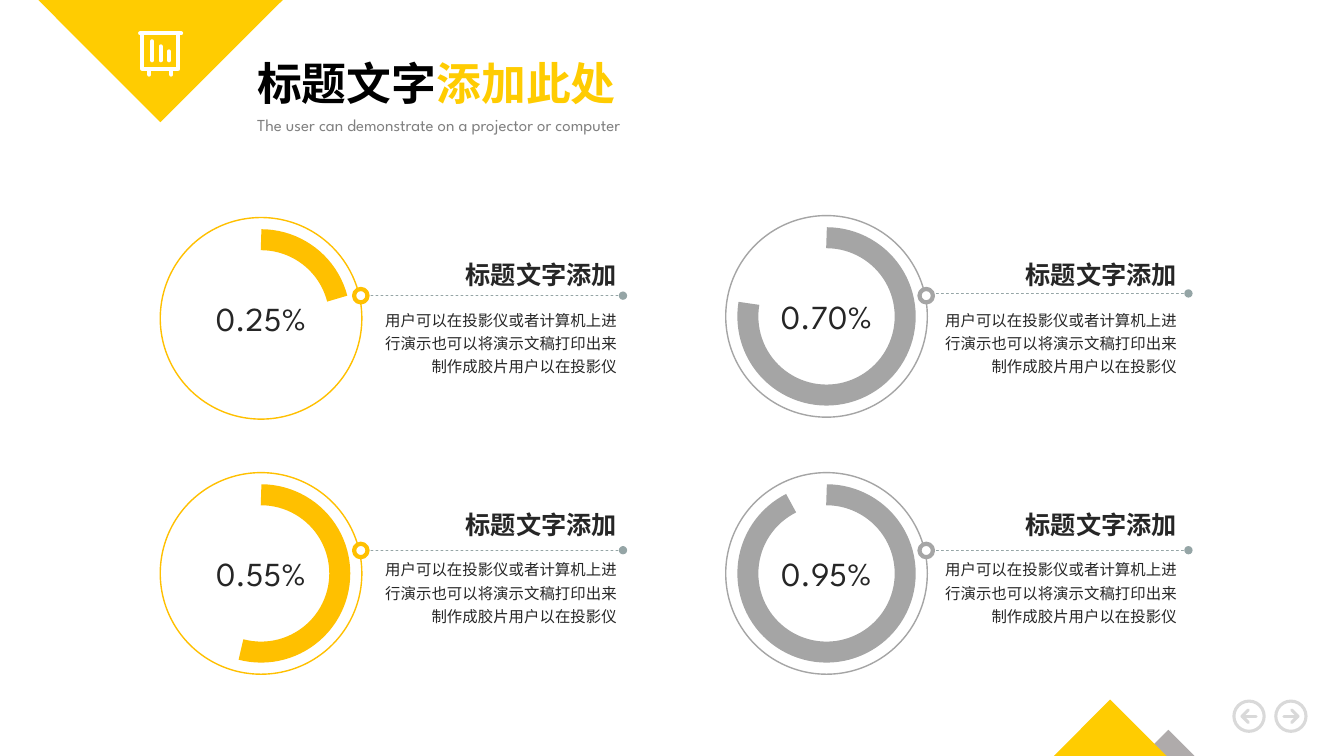
from lxml import etree
from pptx import Presentation
from pptx.dml.color import RGBColor
from pptx.enum.dml import MSO_LINE
from pptx.enum.shapes import MSO_CONNECTOR, MSO_SHAPE
from pptx.enum.text import MSO_ANCHOR, MSO_AUTO_SIZE, PP_ALIGN
from pptx.oxml.ns import qn
from pptx.util import Pt

STRAIGHT = MSO_CONNECTOR.STRAIGHT
OVAL, ARC = MSO_SHAPE.OVAL, MSO_SHAPE.ARC
RECTANGLE = MSO_SHAPE.RECTANGLE
LEFT, CENTER, RIGHT = PP_ALIGN.LEFT, PP_ALIGN.CENTER, PP_ALIGN.RIGHT
TOP, MIDDLE = MSO_ANCHOR.TOP, MSO_ANCHOR.MIDDLE
NO_AUTOFIT = MSO_AUTO_SIZE.NONE
DASH = MSO_LINE.DASH

COLORS = {
    "yellow": "FFCC01", "amber": "FFC000", "gray": "A5A5A5",
    "hill": "AFABAB", "leader": "95A5A6", "nav": "D9D9D9",
    "ink": "262626", "subtitle": "808080", "black": "000000", "white": "FFFFFF",
}
LATIN, CJK = "League Spartan", "Noto Sans CJK SC"
FONTS = {
    "title": {"name": CJK, "size": Pt(32), "bold": True},
    "subtitle": {"name": LATIN, "size": Pt(12), "bold": False},
    "percent": {"name": LATIN, "size": Pt(24)},
    "heading": {"name": "Arial", "size": Pt(18), "bold": True},
    "body": {"name": "Arial", "size": Pt(11)},
}
CARD_HEADING = "标题文字添加"
CARD_BODY = "用户可以在投影仪或者计算机上进行演示也可以将演示文稿打印出来制作成胶片用户以在投影仪"

# Percent, arc end in degrees, color, gauge left and top, leader y, text right and top
CARDS = [
    ("0.25%", 345.48, "amber", 114.5, 155.4, 211.2, 447.8, 177.1),
    ("0.70%", 189.54, "gray", 518.4, 154, 209.6, 847.8, 177.1),
    ("0.55%", 104.83, "amber", 114.5, 337.6, 393, 447.8, 355.7),
    ("0.95%", 243.25, "gray", 518.4, 337.6, 393, 847.8, 355.7),
]


def rgb(color):
    return RGBColor.from_string(COLORS[color])


def apply(target, values):
    for name, value in values.items():
        setattr(target, name, value)


def write(paragraph, text, style, color, **layout):
    apply(paragraph, layout)
    run = paragraph.add_run()
    run.text = text
    apply(run.font, FONTS[style])
    run.font.color.rgb = rgb(color)
    etree.SubElement(run.font._element, qn("a:ea"), typeface=CJK)


def place(shape, left, top, width, height):
    apply(shape, {"left": Pt(left), "top": Pt(top),
                  "width": Pt(width), "height": Pt(height)})


def outline(shapes, kind, left, top, width, height, color, weight, fill=None):
    shape = shapes.add_shape(kind, Pt(left), Pt(top), Pt(width), Pt(height))
    shape.shadow.inherit = False
    if fill:
        shape.fill.solid()
        shape.fill.fore_color.rgb = rgb(fill)
    else:
        shape.fill.background()
    shape.line.color.rgb = rgb(color)
    shape.line.width = Pt(weight)
    return shape


def stroke(shapes, x1, y1, x2, y2, color, weight):
    line = shapes.add_connector(STRAIGHT, Pt(x1), Pt(y1), Pt(x2), Pt(y2))
    line.line.color.rgb = rgb(color)
    line.line.width = Pt(weight)
    line.line._ln.set("cap", "rnd")
    etree.SubElement(line._element.spPr, qn("a:effectLst"))
    return line


def triangle(shapes, points, color):
    builder = shapes.build_freeform(Pt(points[0][0]), Pt(points[0][1]))
    builder.add_line_segments([(Pt(x), Pt(y)) for x, y in points[1:]], close=True)
    shape = builder.convert_to_shape()
    shape.shadow.inherit = False
    shape.fill.solid()
    shape.fill.fore_color.rgb = rgb(color)
    shape.line.fill.background()


def card_text(shapes, right, top, width, height, text, style, spacing):
    box = shapes.add_textbox(Pt(right - width), Pt(top), Pt(width), Pt(height))
    box.text_frame.word_wrap = True
    write(box.text_frame.paragraphs[0], text, style, "ink",
          alignment=RIGHT, line_spacing=spacing)


def header(slide, left, top):
    title, subtitle = slide.placeholders
    place(title, left, top, 272.9, 46)
    place(subtitle, left, top + 40.3, 521.3, 23.8)
    for holder, wrap in ((title, False), (subtitle, True)):
        apply(holder.text_frame, {"auto_size": NO_AUTOFIT, "word_wrap": wrap,
                                  "vertical_anchor": TOP})
    heading = title.text_frame.paragraphs[0]
    write(heading, "标题文字", "title", "black", alignment=LEFT)
    write(heading, "添加此处", "title", "yellow")
    write(subtitle.text_frame.paragraphs[0],
          "The user can demonstrate on a projector or computer",
          "subtitle", "subtitle", alignment=LEFT, line_spacing=1.14,
          space_before=Pt(0))


def gauge_card(slide, percent, end, color, left, top, leader_y, right, text_top):
    shapes = slide.shapes.add_group_shape().shapes
    # Gauge ring, percentage and progress arc
    ring = outline(shapes, OVAL, left, top, 144, 144, color, 1)
    apply(ring.text_frame, {"word_wrap": False, "vertical_anchor": MIDDLE})
    write(ring.text_frame.paragraphs[0], percent, "percent", "ink", alignment=CENTER)
    progress = outline(shapes, ARC, left + 15.8, top + 15.8, 112.4, 112.4, color, 15)
    for index, angle in enumerate((270, end)):
        progress.adjustments[index] = angle * 0.6
    # Dashed leader and the knob on the ring
    leader = stroke(shapes, left + 143.3, leader_y, left + 330.5, leader_y, "leader", 0.5)
    leader.line.dash_style = DASH
    etree.SubElement(leader.line._ln, qn("a:tailEnd"), type="oval")
    knob_top = 206.4 if text_top < 270 else 388.4
    outline(shapes, OVAL, left + 138.4, knob_top, 9.6, 9.6, color, 3, "white")
    # Heading and description
    card_text(shapes, right, text_top, 161.3, 33, CARD_HEADING, "heading", 1.2)
    body_top = text_top + (leader_y - text_top > 36 and 37.9 or 38.2)
    card_text(shapes, right, body_top, 185.8, 57.6, CARD_BODY, "body", 1.25)


def chart_board_icon(slide, left, top):
    shapes = slide.shapes
    outline(shapes, RECTANGLE, left + 3, top + 1.5, 25.8, 25.2, "white", 2.9)
    stroke(shapes, left + 1.5, top + 1.5, left + 30.8, top + 1.5, "white", 2.9)
    for bar, start in enumerate((7.2, 10.8, 14.4)):
        x = left + 10.1 + 6 * bar
        stroke(shapes, x, top + start, x, top + 20.8, "white", 2.9)
    for x in (left + 8, left + 23.8):
        stroke(shapes, x, top + 27, x, top + 31, "white", 2.9)


def nav_button(slide, left, top, direction):
    shapes = slide.shapes
    x, y = left + 11.9, top + 11.9
    tip = x + 5 * direction
    outline(shapes, OVAL, left + 1.1, top + 1.1, 21.6, 21.6, "nav", 2.2)
    stroke(shapes, x - 5 * direction, y, tip, y, "nav", 2.2)
    for rise in (-4.5, 4.5):
        stroke(shapes, x + 0.5 * direction, y + rise, tip, y, "nav", 2.2)


def main():
    deck = Presentation()
    deck.slide_width, deck.slide_height = Pt(960), Pt(540)
    slide = deck.slides.add_slide(deck.slide_layouts[2])
    header(slide, 176.4, 36)
    for card in CARDS:
        gauge_card(slide, *card)
    # Corner triangles
    for points, color in (
        ([(834.5, 521.3), (853.2, 540), (815.8, 540)], "hill"),
        ([(27.3, 0), (202, 0), (114.6, 87.3)], "yellow"),
        ([(793, 499.7), (833.3, 540), (752.8, 540)], "yellow"),
    ):
        triangle(slide.shapes, points, color)
    chart_board_icon(slide, 98.6, 22.3)
    nav_button(slide, 880.3, 499.7, -1)
    nav_button(slide, 910.2, 499.7, 1)
    deck.save("out.pptx")


if __name__ == "__main__":
    main()
